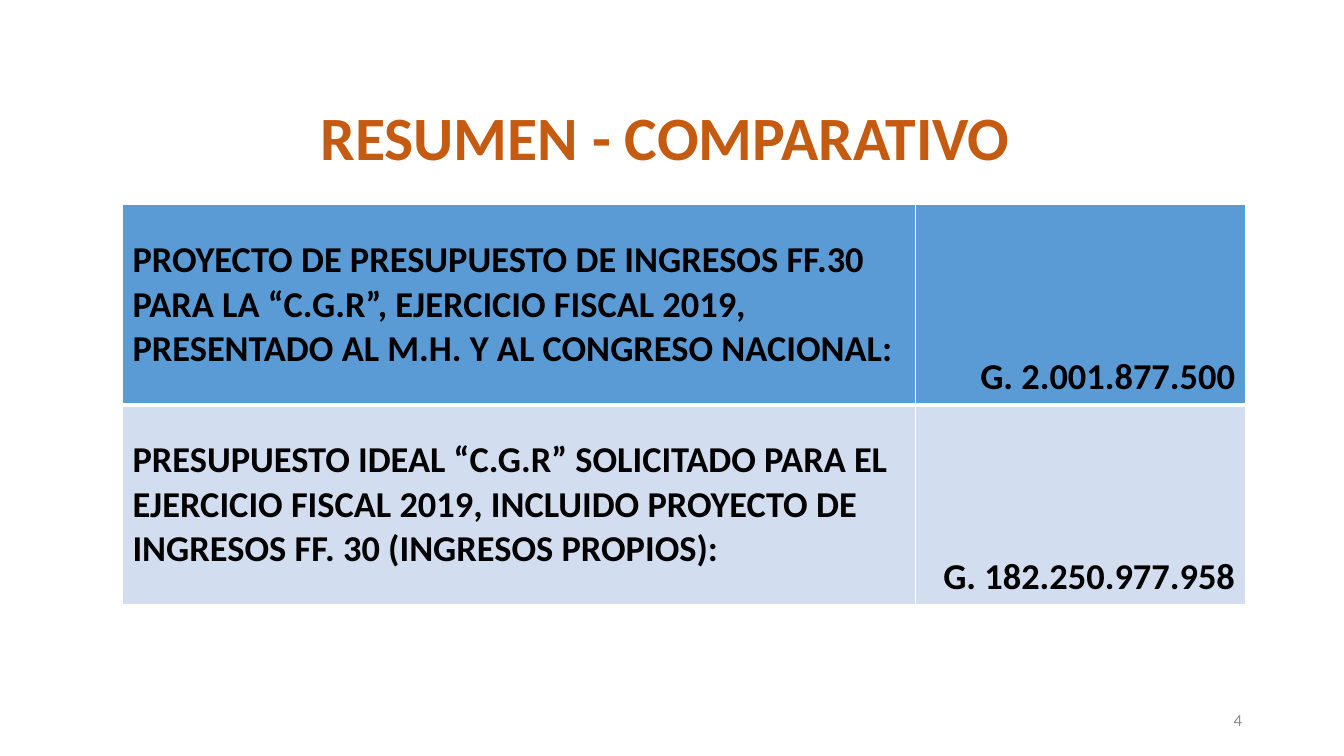
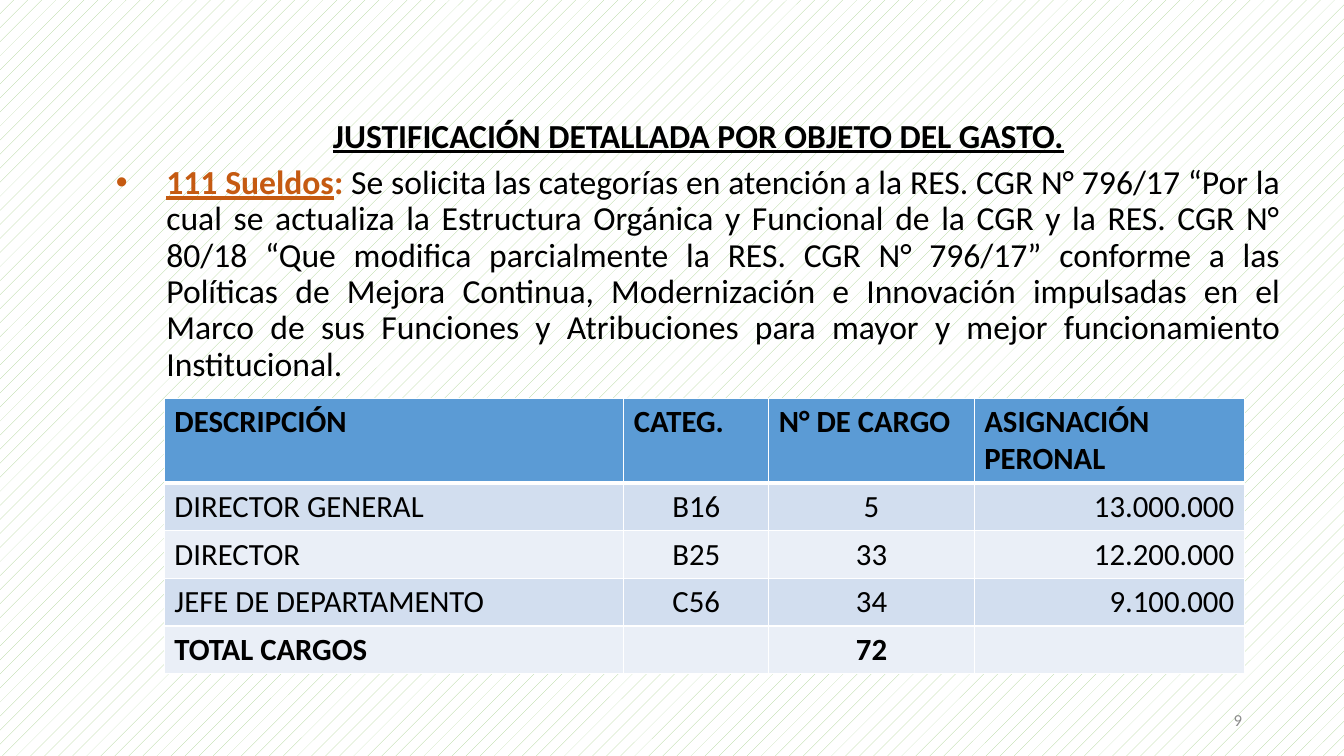
import pptx
import pptx.util
import pptx.dml.color
import pptx.enum.dml
import pptx.enum.text
import pptx.oxml
import pptx.oxml.ns
from dataclasses import dataclass
from lxml import etree

RGB = pptx.dml.color.RGBColor
ALIGN = pptx.enum.text.PP_ALIGN
ANCHOR = pptx.enum.text.MSO_ANCHOR

FONT = "Calibri"
BLACK = RGB(0x00, 0x00, 0x00)
WHITE = RGB(0xFF, 0xFF, 0xFF)
ORANGE = RGB(0xC5, 0x5A, 0x11)
GREEN = RGB(0xA9, 0xD1, 0x8E)
GREY = RGB(0x8C, 0x8C, 0x8C)
HEADER_BLUE = RGB(0x5B, 0x9B, 0xD5)
BANDS = (RGB(0xD2, 0xDE, 0xEF), RGB(0xEA, 0xEF, 0xF7))

SLIDE_WIDTH = pptx.util.Inches(13.33)
SLIDE_HEIGHT = pptx.util.Inches(7.5)
TITLE_ONLY, TITLE_AND_CONTENT = 5, 1


@dataclass
class Box:
    """Left, top, width and height in percent of the slide."""
    left: float
    top: float
    width: float
    height: float

    def emu(self):
        return (
            round(SLIDE_WIDTH * self.left / 100),
            round(SLIDE_HEIGHT * self.top / 100),
            round(SLIDE_WIDTH * self.width / 100),
            round(SLIDE_HEIGHT * self.height / 100),
        )

    def rows(self, *weights):
        top = self.top
        for weight in weights:
            height = self.height * weight / sum(weights)
            yield Box(self.left, top, self.width, height)
            top += height


PAGE_NUMBER_BOX = Box(70.67, 92.67, 22.5, 5.33)


def write(paragraph, text, size=24, color=BLACK, bold=False, underline=False,
          align=None):
    run = paragraph.add_run()
    run.text = text
    run.font.name = FONT
    run.font.size = pptx.util.Pt(size)
    run.font.color.rgb = color
    run.font.bold = bold
    run.font.underline = underline
    if align is not None:
        paragraph.alignment = align


def place(holder, box, anchor):
    holder.left, holder.top, holder.width, holder.height = box.emu()
    frame = holder.text_frame
    frame.word_wrap = True
    frame.auto_size = pptx.enum.text.MSO_AUTO_SIZE.NONE
    frame.vertical_anchor = anchor
    paragraph = frame.paragraphs[0]
    paragraph.line_spacing = 0.9
    paragraph.space_before = pptx.util.Pt(0)
    return paragraph


def add_title(slide, box, text, **style):
    paragraph = place(slide.shapes.title, box, ANCHOR.MIDDLE)
    write(paragraph, text, bold=True, align=ALIGN.CENTER, **style)


def add_page_number(slide, number):
    footer = slide.shapes.add_textbox(*PAGE_NUMBER_BOX.emu())
    paragraph = place(footer, PAGE_NUMBER_BOX, ANCHOR.MIDDLE)
    write(paragraph, str(number), size=12, color=GREY, align=ALIGN.RIGHT)


def add_bullet(paragraph, color, indent):
    properties = paragraph._p.get_or_add_pPr()
    properties.set("marL", str(indent))
    properties.set("indent", str(-indent))
    namespace = pptx.oxml.ns.nsdecls("a")
    for markup in (
        f'<a:buClr {namespace}><a:srgbClr val="{color}"/></a:buClr>',
        f'<a:buFont {namespace} typeface="Arial"/>',
        f'<a:buChar {namespace} char="•"/>',
    ):
        properties.append(pptx.oxml.parse_xml(markup))


def add_borders(cell, top, bottom):
    properties = cell._tc.get_or_add_tcPr()
    qn = pptx.oxml.ns.qn
    for side, points in (("L", 1), ("R", 1), ("T", top), ("B", bottom)):
        line = etree.SubElement(properties, qn(f"a:ln{side}"),
                                w=str(pptx.util.Pt(points)))
        fill = etree.SubElement(line, qn("a:solidFill"))
        etree.SubElement(fill, qn("a:srgbClr"), val=str(WHITE))


def add_budget_table(slide, box, rows, widths, heights, aligns, anchors, size,
                     bold_rows):
    frame = slide.shapes.add_table(len(rows), len(widths), *box.emu())
    table = frame.table
    table.horz_banding = False
    _, _, full_width, full_height = box.emu()
    for column, weight in zip(table.columns, widths):
        column.width = round(full_width * weight / sum(widths))
    for row, weight in zip(table.rows, heights):
        row.height = round(full_height * weight / sum(heights))
    for r, texts in enumerate(rows):
        for c, text in enumerate(texts):
            cell = table.cell(r, c)
            add_borders(cell, top=3 if r == 1 else 1, bottom=3 if r == 0 else 1)
            cell.fill.solid()
            cell.fill.fore_color.rgb = BANDS[(r - 1) % 2] if r else HEADER_BLUE
            cell.vertical_anchor = anchors[c]
            if text:
                write(cell.text_frame.paragraphs[0], text, size=size,
                      bold=r in bold_rows, align=aligns[r][c])


def build_summary(deck):
    slide = deck.slides.add_slide(deck.slide_layouts[TITLE_ONLY])
    add_title(slide, Box(6.9, 12.4, 86.27, 12.27), "RESUMEN - COMPARATIVO ",
              size=44, color=ORANGE)
    rows = [
        ("PROYECTO DE PRESUPUESTO DE INGRESOS FF.30 PARA LA “C.G.R”, "
         "EJERCICIO FISCAL 2019, PRESENTADO AL M.H. Y AL CONGRESO NACIONAL:",
         "G. 2.001.877.500"),
        ("PRESUPUESTO IDEAL “C.G.R” SOLICITADO PARA EL EJERCICIO FISCAL 2019, "
         "INCLUIDO PROYECTO DE INGRESOS FF. 30 (INGRESOS PROPIOS):",
         "G. 182.250.977.958"),
    ]
    add_budget_table(
        slide, Box(9.11, 27.07, 83.57, 52.93), rows,
        widths=(7.87, 3.28), heights=(1, 1),
        aligns=[(ALIGN.LEFT, ALIGN.RIGHT)] * 2,
        anchors=(ANCHOR.MIDDLE, ANCHOR.BOTTOM), size=26, bold_rows=(0, 1))
    add_page_number(slide, 4)


def build_justification(deck):
    slide = deck.slides.add_slide(deck.slide_layouts[TITLE_AND_CONTENT])
    background = slide.background.fill
    background.patterned()
    background.pattern = pptx.enum.dml.MSO_PATTERN.PERCENT_5
    background.fore_color.rgb = GREEN
    background.back_color.rgb = WHITE

    heading_box, reason_box = Box(7.88, 15.07, 88.15, 37).rows(1, 5)
    add_title(slide, heading_box,
              "JUSTIFICACIÓN DETALLADA POR OBJETO DEL GASTO.", underline=True)
    reason = place(slide.placeholders[1], reason_box, ANCHOR.TOP)
    add_bullet(reason, ORANGE, pptx.util.Inches(0.5))
    write(reason, "111 Sueldos", color=ORANGE, bold=True, underline=True)
    write(reason, ": ", color=ORANGE, bold=True)
    write(reason,
          "Se solicita las categorías en atención a la RES. CGR N° 796/17 “Por "
          "la cual se actualiza la Estructura Orgánica y Funcional de la CGR y "
          "la RES. CGR N° 80/18 “Que modifica parcialmente la RES. CGR N° "
          "796/17” conforme a las Políticas de Mejora Continua, Modernización "
          "e Innovación impulsadas en el Marco de sus Funciones y Atribuciones "
          "para mayor y mejor funcionamiento Institucional.",
          align=ALIGN.JUSTIFY)

    rows = [
        ("DESCRIPCIÓN", "CATEG.", "N° DE CARGO", "ASIGNACIÓN PERONAL"),
        ("DIRECTOR GENERAL", "B16", "5", "13.000.000"),
        ("DIRECTOR", "B25", "33", "12.200.000"),
        ("JEFE DE DEPARTAMENTO", "C56", "34", "9.100.000"),
        ("TOTAL CARGOS", "", "72", ""),
    ]
    header_aligns = (ALIGN.LEFT,) * 4
    post_aligns = (ALIGN.LEFT, ALIGN.CENTER, ALIGN.CENTER, ALIGN.RIGHT)
    add_budget_table(
        slide, Box(12.23, 52.67, 80.35, 36.27), rows,
        widths=(4.56, 1.44, 2.04, 2.68), heights=(0.84, 0.47, 0.47, 0.47, 0.47),
        aligns=[header_aligns] + [post_aligns] * 4,
        anchors=(ANCHOR.TOP,) * 4, size=22, bold_rows=(0, 4))
    add_page_number(slide, 9)


def main():
    deck = pptx.Presentation()
    deck.slide_width = SLIDE_WIDTH
    deck.slide_height = SLIDE_HEIGHT
    build_summary(deck)
    build_justification(deck)
    deck.save("out.pptx")


if __name__ == "__main__":
    main()
